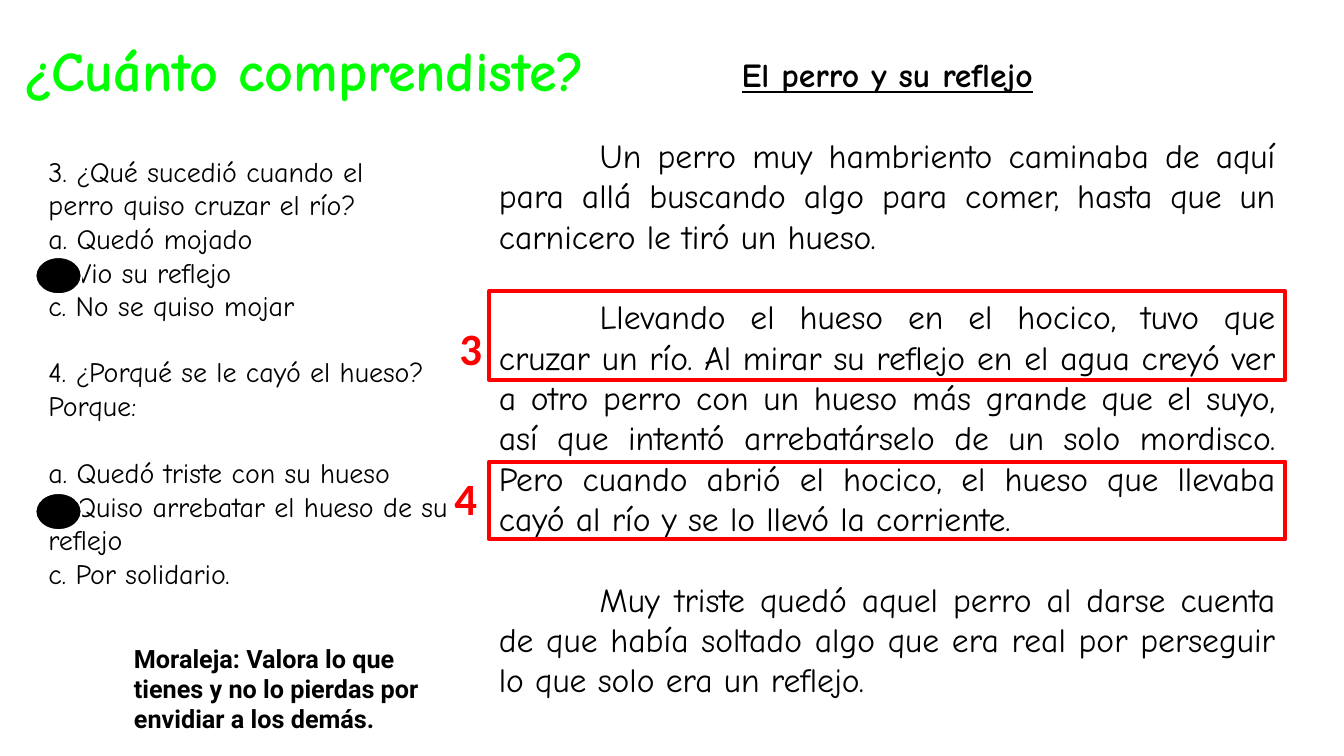
from pptx import Presentation
from pptx.dml.color import RGBColor
from pptx.enum.shapes import MSO_SHAPE
from pptx.enum.text import MSO_ANCHOR, MSO_AUTO_SIZE, PP_ALIGN
from pptx.oxml.ns import qn
from pptx.util import Inches, Pt

OVAL, RECTANGLE = MSO_SHAPE.OVAL, MSO_SHAPE.RECTANGLE
LEFT, CENTER, JUSTIFY = PP_ALIGN.LEFT, PP_ALIGN.CENTER, PP_ALIGN.JUSTIFY
TOP, NO_FIT = MSO_ANCHOR.TOP, MSO_AUTO_SIZE.NONE

WIDTH, HEIGHT = Inches(13.333), Inches(7.5)
BLACK, WHITE, RED, GREEN = "000000", "FFFFFF", "FF0000", "00FF00"
HAND, SANS, DIGIT = "Comic Neue", "Roboto", "Calibri"
BLANK_LINE = 1.2  # height of one line, as a multiple of the text size

QUESTION_3 = [
    "3. ¿Qué sucedió cuando el perro quiso cruzar el río?",
    "a. Quedó mojado",
    "b. Vio su reflejo",
    "c. No se quiso mojar",
]
QUESTION_4 = ["4. ¿Porqué se le cayó el hueso?", "Porque:"]
ANSWERS_4 = [
    "a. Quedó triste con su hueso",
    "b. Quiso arrebatar el hueso de su reflejo",
    "c. Por solidario.",
]
STORY = [
    "Un perro muy hambriento caminaba de aquí para allá buscando algo para "
    "comer, hasta que un carnicero le tiró un hueso.",
    "Llevando el hueso en el hocico, tuvo que cruzar un río. Al mirar su "
    "reflejo en el agua creyó ver a otro perro con un hueso más grande que el "
    "suyo, así que intentó arrebatárselo de un solo mordisco. Pero cuando "
    "abrió el hocico, el hueso que llevaba cayó al río y se lo llevó la "
    "corriente.",
    "Muy triste quedó aquel perro al darse cuenta de que había soltado algo "
    "que era real por perseguir lo que solo era un reflejo.",
]


def color(value):
    return RGBColor.from_string(value)


def area(left, top, width, height):
    """Turn percentages of the slide's width and height into lengths."""
    return (int(WIDTH * left / 100), int(HEIGHT * top / 100),
            int(WIDTH * width / 100), int(HEIGHT * height / 100))


def place(box, *shares):
    box.left, box.top, box.width, box.height = area(*shares)
    frame = box.text_frame
    frame.word_wrap = True
    frame.auto_size = NO_FIT
    frame.vertical_anchor = TOP
    return frame


def add_box(page, *shares):
    return place(page.shapes.add_textbox(*area(*shares)), *shares)


def write(frame, text, size=20, font=HAND, fill=BLACK, bold=False,
          underline=False, align=LEFT, gap=0, indent=0):
    """Add a paragraph; gap counts the blank lines above it."""
    para = frame.paragraphs[0]
    if para.runs:
        para = frame.add_paragraph()
    para.alignment = align
    para.line_spacing = 1.0
    para.space_before = Pt(gap * BLANK_LINE * size)
    properties = para._p.get_or_add_pPr()
    properties.set("marL", "0")
    properties.set("indent", str(Inches(indent)))
    properties.append(properties.makeelement(qn("a:buNone"), {}))
    span = para.add_run()
    span.text = text
    span.font.name = font
    span.font.size = Pt(size)
    span.font.bold = bold
    span.font.underline = underline
    span.font.color.rgb = color(fill)


def add_figure(page, kind, shares, line, weight, fill=None):
    figure = page.shapes.add_shape(kind, *area(*shares))
    figure.shadow.inherit = False
    if fill:
        figure.fill.solid()
        figure.fill.fore_color.rgb = color(fill)
    else:
        figure.fill.background()
    figure.line.color.rgb = color(line)
    figure.line.width = Pt(weight)


def main():
    deck = Presentation()
    deck.slide_width, deck.slide_height = WIDTH, HEIGHT
    page = deck.slides.add_slide(deck.slide_layouts[3])
    title, first_list, second_list = page.placeholders

    # Title and questions
    write(place(title, 0.98, 4, 54.45, 10.27), "¿Cuánto comprendiste?",
          size=40, fill=GREEN, bold=True)
    question = place(first_list, 2.85, 19.73, 30.45, 23.73)
    for text in QUESTION_3:
        write(question, text)
    question = place(second_list, 2.85, 46.27, 31.88, 32.8)
    for text in QUESTION_4:
        write(question, text)
    for number, text in enumerate(ANSWERS_4):
        write(question, text, gap=int(number == 0))

    # Story
    story = add_box(page, 36.38, 6.53, 59.25, 87.47)
    write(story, "El perro y su reflejo", size=24, bold=True, underline=True,
          align=CENTER)
    for text in STORY:
        write(story, text, size=24, align=JUSTIFY, gap=1, indent=1)

    # Moral
    write(add_box(page, 9.23, 84.4, 26.18, 13.47),
          "Moraleja: Valora lo que tienes y no lo pierdas por envidiar a los "
          "demás.", size=18, font=SANS, bold=True)

    # Chosen answers
    for top in (34, 65.2):
        add_figure(page, OVAL, (2.63, top, 3.45, 4.93), WHITE, 1.5, BLACK)

    # Passages that hold the answers: frame top, height, digit, its left and top
    for top, height, digit, digit_left, digit_top in (
            (38.53, 11.73, "3", 33.45, 41.73),
            (61.07, 10.27, "4", 33.08, 61.6)):
        add_figure(page, RECTANGLE, (36.38, top, 59.25, height), RED, 3)
        write(add_box(page, digit_left, digit_top, 3.75, 8.53), digit,
              size=32, font=DIGIT, fill=RED, bold=True)

    deck.save("out.pptx")


if __name__ == "__main__":
    main()
